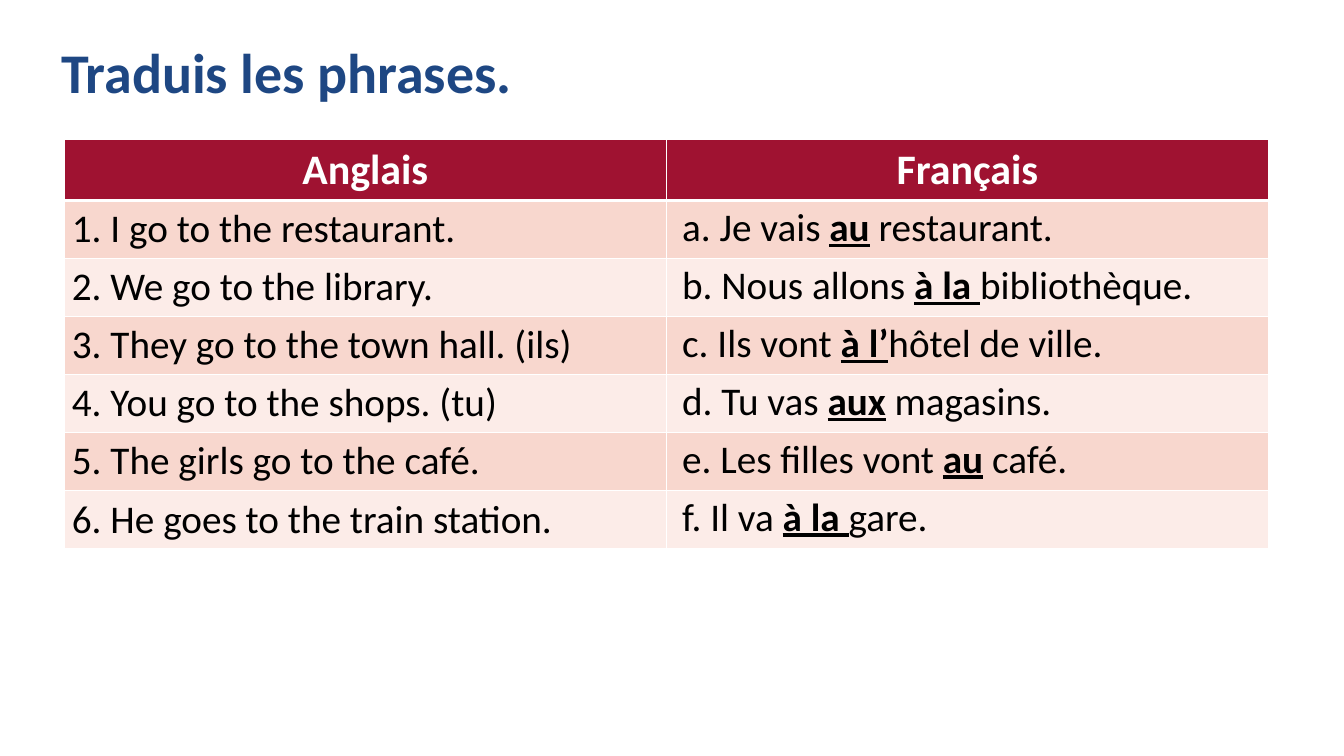
from dataclasses import dataclass

from lxml import etree
from pptx import Presentation
from pptx import util as u
from pptx.dml.color import RGBColor
from pptx.enum import text
from pptx.oxml import ns


@dataclass(frozen=True)
class Theme:
    font: str = "Calibri"
    title: str = "1E4783"
    header: str = "9F1231"
    bands: tuple = ("F8D7CE", "FCECE8")
    white: str = "FFFFFF"
    black: str = "000000"
    title_size: int = 40
    header_size: int = 30
    body_size: int = 28


THEME = Theme()
HEADINGS = ("Anglais", "Français")
SENTENCES = (
    ("1. I go to the restaurant.", ("a. Je vais ", "au", " restaurant.")),
    ("2. We go to the library.", ("b. Nous allons ", "à la ", "bibliothèque.")),
    ("3. They go to the town hall. (ils)", ("c. Ils vont ", "à l’", "hôtel de ville.")),
    ("4. You go to the shops. (tu)", ("d. Tu vas ", "aux", " magasins.")),
    ("5. The girls go to the café.", ("e. Les filles vont ", "au", " café.")),
    ("6. He goes to the train station.", ("f. Il va ", "à la ", "gare.")),
)
TABLE_LEFT, TABLE_TOP, COLUMN_WIDTH = 46, 99.4, 430
HEADER_HEIGHT, ROW_HEIGHT = 43.8, 41.4
ANSWER_LEFT, ANSWER_TOP, ANSWER_WIDTH = 480.2, 141, 425.5


def set_font(font, size, color, bold=False):
    font.name = THEME.font
    font.size = u.Pt(size)
    font.bold = bold
    font.color.rgb = RGBColor.from_string(color)


def set_borders(cell, top=1, bottom=1):
    """Draw white borders, with the top and bottom widths in points."""
    properties = cell._tc.get_or_add_tcPr()
    widths = {"a:lnL": 1, "a:lnR": 1, "a:lnT": top, "a:lnB": bottom}
    for index, (tag, width) in enumerate(widths.items()):
        line = etree.Element(ns.qn(tag), w=str(u.Pt(width)))
        fill = etree.SubElement(line, ns.qn("a:solidFill"))
        etree.SubElement(fill, ns.qn("a:srgbClr"), val=THEME.white)
        properties.insert(index, line)


def fill_cell(cell, color, top=1, bottom=1):
    cell.fill.solid()
    cell.fill.fore_color.rgb = RGBColor.from_string(color)
    cell.margin_left = cell.margin_right = u.Pt(5.4)
    set_borders(cell, top, bottom)


def add_title(slide, wording):
    title = slide.shapes.title
    title.left, title.top, title.width, title.height = map(u.Pt, (36.5, 29, 828, 49))
    title.text_frame.text = wording
    title.text_frame.vertical_anchor = text.MSO_ANCHOR.MIDDLE
    para = title.text_frame.paragraphs[0]
    para.alignment = text.PP_ALIGN.LEFT
    para.line_spacing = 0.9
    set_font(para.font, THEME.title_size, THEME.title, bold=True)


def add_sentence_table(slide):
    height = HEADER_HEIGHT + ROW_HEIGHT * len(SENTENCES)
    table = slide.shapes.add_table(
        len(SENTENCES) + 1, 2, u.Pt(TABLE_LEFT), u.Pt(TABLE_TOP),
        u.Pt(2 * COLUMN_WIDTH), u.Pt(height)).table
    table.rows[0].height = u.Pt(HEADER_HEIGHT)
    for column, heading in enumerate(HEADINGS):
        cell = table.cell(0, column)
        fill_cell(cell, THEME.header, bottom=3)
        cell.text = heading
        para = cell.text_frame.paragraphs[0]
        para.alignment = text.PP_ALIGN.CENTER
        set_font(para.font, THEME.header_size, THEME.white, bold=True)
    for row, (english, _) in enumerate(SENTENCES, start=1):
        table.rows[row].height = u.Pt(ROW_HEIGHT)
        for column in range(2):
            fill_cell(table.cell(row, column), THEME.bands[(row - 1) % 2],
                      top=3 if row == 1 else 1)
        cell = table.cell(row, 0)
        cell.text = english
        set_font(cell.text_frame.paragraphs[0].font, THEME.body_size, THEME.black)


def add_answer(slide, top, parts):
    """Add a French sentence whose middle part is bold and underlined."""
    box = slide.shapes.add_textbox(
        u.Pt(ANSWER_LEFT), u.Pt(top), u.Pt(ANSWER_WIDTH), u.Pt(ROW_HEIGHT))
    box.text_frame.word_wrap = True
    box.text_frame.auto_size = text.MSO_AUTO_SIZE.SHAPE_TO_FIT_TEXT
    para = box.text_frame.paragraphs[0]
    for index, part in enumerate(parts):
        span = para.add_run()
        span.text = part
        set_font(span.font, THEME.body_size, THEME.black, bold=index == 1)
        span.font.underline = index == 1


def main():
    deck = Presentation()
    deck.slide_width, deck.slide_height = u.Pt(960), u.Pt(540)
    slide = deck.slides.add_slide(deck.slide_layouts.get_by_name("Title Only"))
    add_title(slide, "Traduis les phrases.")
    add_sentence_table(slide)
    for index, (_, french) in enumerate(SENTENCES):
        add_answer(slide, ANSWER_TOP + index * ROW_HEIGHT, french)
    deck.save("out.pptx")


if __name__ == "__main__":
    main()
